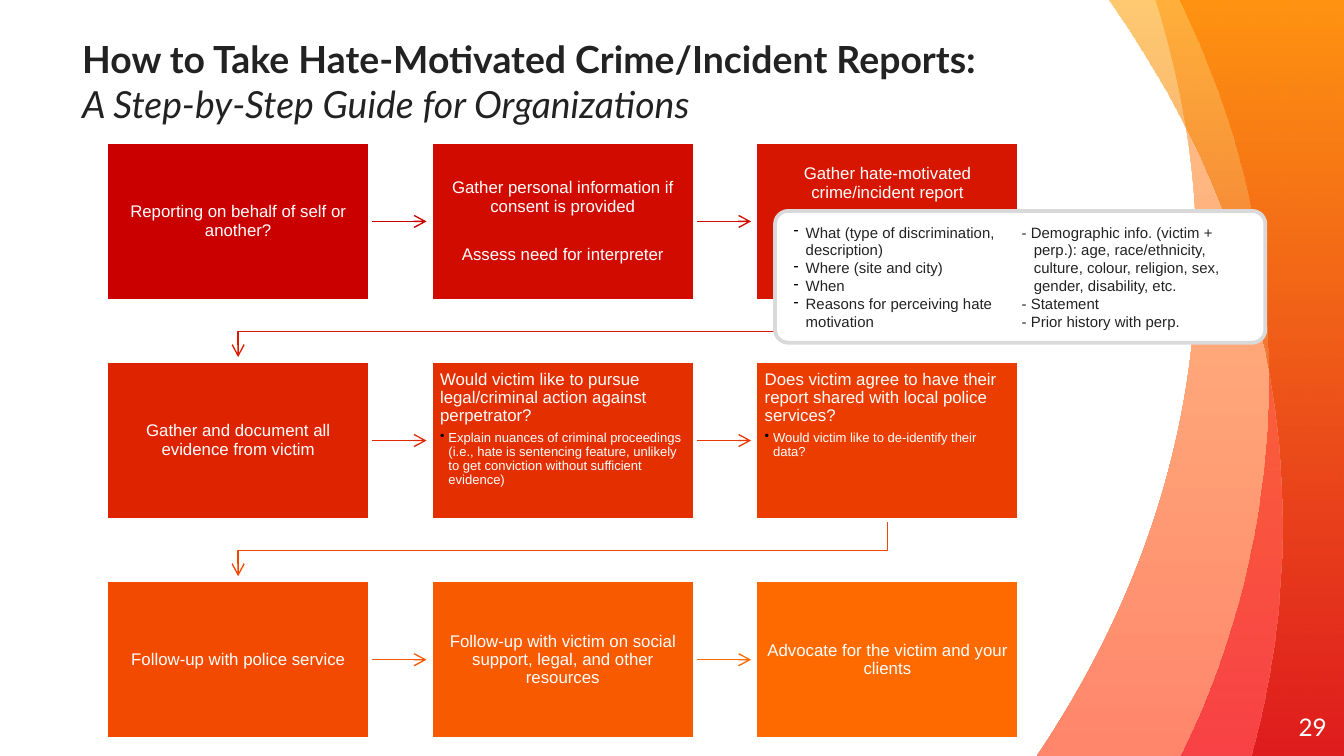
from lxml import etree
from pptx import Presentation, util as u
from pptx.dml.color import RGBColor
from pptx.enum import shapes, text
from pptx.oxml import ns

Pt = u.Pt
WHITE = RGBColor.from_string("FFFFFF")
INK = RGBColor.from_string("222222")
BLACK = RGBColor.from_string("000000")
BORDER = RGBColor.from_string("D9D9D9")
PEACH, CORAL = RGBColor.from_string("FFC486"), RGBColor.from_string("FF866B")
ORANGE, CRIMSON = RGBColor.from_string("FF6A00"), RGBColor.from_string("F20122")
AMBER, RED = RGBColor.from_string("FF9F00"), RGBColor.from_string("CC0000")
STEP_COLORS = [RGBColor.from_string(code) for code in (
    "CA0000", "D10B00", "D71600", "DE2300", "E42F00", "EB3D00", "F24B00", "F85A00", "FF6A00")]
ARROW_COLORS = [RGBColor.from_string(code) for code in (
    "CA0000", "D20C00", "D91A00", "E12800", "E83700", "F04700", "F75800", "FF6A00")]

WIDTH, HEIGHT = 720, 405
GRID_LEFT, GRID_TOP = 56.9, 76.2
STEP_WIDTH, STEP_HEIGHT = 141.4, 84.9
PITCH_X, PITCH_Y = 173.9, 117.4
ARROW_LENGTH, ARROW_HEIGHT, BEND = 30.2, 7.2, 16.5

STEPS = [
    ["Reporting on behalf of self or another?"],
    ["Gather personal information if consent is provided", "Assess need for interpreter"],
    ["Gather hate-motivated crime/incident report"],
    ["Gather and document all evidence from victim"],
    ["Would victim like to pursue legal/criminal action against perpetrator?",
     "Explain nuances of criminal proceedings (i.e., hate is sentencing feature, "
     "unlikely to get conviction without sufficient evidence)"],
    ["Does victim agree to have their report shared with local police services?",
     "Would victim like to de-identify their data?"],
    ["Follow-up with police service"],
    ["Follow-up with victim on social support, legal, and other resources"],
    ["Advocate for the victim and your clients"],
]
BULLETED_STEPS = (4, 5)
REPORT_STEP = 2
DETAILS = ["What (type of discrimination, description)", "Where (site and city)", "When",
           "Reasons for perceiving hate motivation"]
MORE_DETAILS = ["- Demographic info. (victim + perp.): age, race/ethnicity, culture, colour, "
                "religion, sex, gender, disability, etc.",
                "- Statement", "- Prior history with perp."]


def add_child(parent, tag, **attributes):
    return etree.SubElement(parent, ns.qn(tag), {key: str(value) for key, value in attributes.items()})


def setup_frame(shape, anchor, margin):
    frame = shape.text_frame
    frame.word_wrap = True
    frame.vertical_anchor = anchor
    frame.margin_left = frame.margin_right = frame.margin_top = frame.margin_bottom = Pt(margin)
    return frame


def add_paragraph(frame, content, size, color, font="Arial", align=text.PP_ALIGN.LEFT,
                  left=0, hanging=0, bullet=None):
    paragraph = frame.paragraphs[0] if not frame.text else frame.add_paragraph()
    paragraph.text = content
    properties = paragraph._p.get_or_add_pPr()
    properties.set("marL", str(Pt(left)))
    properties.set("indent", str(-Pt(hanging)))
    if bullet:
        add_child(add_child(properties, "a:buClr"), "a:srgbClr", val=BLACK)
        add_child(properties, "a:buChar", char=bullet)
        paragraph.runs[0].font.size = Pt(size)
    paragraph.alignment = align
    paragraph.font.size = Pt(size)
    paragraph.font.name = font
    paragraph.font.color.rgb = color
    return paragraph


def add_box(slide, kind, left, top, width, height, fill, line):
    shape = slide.shapes.add_shape(kind, Pt(left), Pt(top), Pt(width), Pt(height))
    shape.shadow.inherit = False
    shape.fill.solid()
    shape.fill.fore_color.rgb = fill
    shape.line.color.rgb = line
    shape.line.width = Pt(2)
    return shape


def add_outline(slide, points, close):
    corners = [(Pt(x), Pt(y)) for x, y in points]
    builder = slide.shapes.build_freeform(*corners[0], scale=1.0)
    builder.add_line_segments(corners[1:], close=close)
    shape = builder.convert_to_shape()
    shape.shadow.inherit = False
    return shape


def bend_segment(shape, segment, controls):
    segment.tag = ns.qn("a:cubicBezTo")
    for index, (x, y) in enumerate(controls):
        segment.insert(index, etree.Element(
            ns.qn("a:pt"), x=str(Pt(x) - shape.left), y=str(Pt(y) - shape.top)))


def add_wave(slide, start, curves, top_color, bottom_color, opacities=(100, 100)):
    ends = [curve[2] for curve in curves]
    shape = add_outline(slide, [start] + ends + [(WIDTH, HEIGHT), (WIDTH, 0)], True)
    segments = list(shape._element.spPr.iter(ns.qn("a:lnTo")))
    for segment, curve in zip(segments, curves):
        bend_segment(shape, segment, curve[:2])
    shape.line.fill.background()
    shape.fill.gradient()
    shape.fill.gradient_angle = 270
    for stop, color in zip(shape.fill.gradient_stops, (top_color, bottom_color)):
        stop.color.rgb = color
    for color, opacity in zip(shape._element.spPr.iter(ns.qn("a:srgbClr")), opacities):
        if opacity < 100:
            add_child(color, "a:alpha", val=opacity * 1000)


def add_waves(slide):
    add_wave(slide, (619, 0), [((633, 44), (641, 90), (641, 137.5)),
                               ((641, 233), (610, 324), (555.5, HEIGHT))], PEACH, CORAL)
    add_wave(slide, (632, 0), [((663, 64), (679.5, 132), (679.5, 203)),
                               ((679.5, 274), (663, 343), (632.5, HEIGHT))],
             ORANGE, CRIMSON, (71, 51))
    add_wave(slide, (594, 0), [((654, 86), (687, 181), (687, 281.5)),
                               ((687, 324), (681, 366), (670, HEIGHT))], AMBER, RED, (56, 57))


def add_arrow_line(slide, points, color):
    shape = add_outline(slide, points, False)
    shape.fill.background()
    shape.line.color.rgb = color
    shape.line.width = Pt(0.75)
    add_child(shape.line._get_or_add_ln(), "a:tailEnd", type="arrow")
    return shape


def add_arrow(slide, left, top, color):
    right, middle = left + STEP_WIDTH, top + STEP_HEIGHT / 2
    shape = add_arrow_line(slide, [(right, middle), (right + ARROW_LENGTH, middle)], color)
    shape.top, shape.height = Pt(middle - ARROW_HEIGHT / 2), Pt(ARROW_HEIGHT)
    for outline in shape._element.spPr.iter(ns.qn("a:path")):
        outline.set("h", str(Pt(ARROW_HEIGHT)))
        for point in outline.iter(ns.qn("a:pt")):
            point.set("y", str(Pt(ARROW_HEIGHT / 2)))


def add_return_arrow(slide, left, top, color):
    start, end = left + STEP_WIDTH / 2, GRID_LEFT + STEP_WIDTH / 2
    bottom = top + STEP_HEIGHT
    add_arrow_line(slide, [(start, bottom), (start, bottom + BEND), (end, bottom + BEND),
                           (end, bottom + ARROW_LENGTH)], color)


def add_step(slide, index, left, top):
    shape = add_box(slide, shapes.MSO_SHAPE.RECTANGLE, left, top, STEP_WIDTH, STEP_HEIGHT,
                    STEP_COLORS[index], WHITE)
    bulleted = index in BULLETED_STEPS
    at_top = bulleted or index == REPORT_STEP
    frame = setup_frame(shape, text.MSO_ANCHOR.TOP if at_top else text.MSO_ANCHOR.MIDDLE, 5)
    if index == REPORT_STEP:
        frame.margin_top = Pt(12.4)
    for number, content in enumerate(STEPS[index]):
        if bulleted and number:
            paragraph = add_paragraph(frame, content, 7, WHITE, left=4.5, hanging=4.5, bullet="•")
        else:
            align = text.PP_ALIGN.LEFT if bulleted else text.PP_ALIGN.CENTER
            paragraph = add_paragraph(frame, content, 9, WHITE, align=align)
        paragraph.line_spacing = 0.9
        if number < len(STEPS[index]) - 1:
            paragraph.space_after = Pt(3 if bulleted else 16)


def add_flow(slide):
    for index in range(len(STEPS)):
        row, column = divmod(index, 3)
        left, top = GRID_LEFT + column * PITCH_X, GRID_TOP + row * PITCH_Y
        if index < len(ARROW_COLORS):
            draw = add_return_arrow if column == 2 else add_arrow
            draw(slide, left, top, ARROW_COLORS[index])
        add_step(slide, index, left, top)


def add_details(slide):
    shape = add_box(slide, shapes.MSO_SHAPE.ROUNDED_RECTANGLE, 415.2, 113, 262.7, 70.6, WHITE, BORDER)
    shape.adjustments[0] = 0.1
    frame = setup_frame(shape, text.MSO_ANCHOR.MIDDLE, 3.6)
    frame.margin_left = frame.margin_right = Pt(7.2)
    frame._txBody.bodyPr.set("numCol", "2")
    for content in DETAILS + MORE_DETAILS:
        bullet = "-" if content in DETAILS else None
        add_paragraph(frame, content, 8, INK, left=7.3, hanging=6.5, bullet=bullet)


def add_label(slide, left, top, width, height):
    shape = slide.shapes.add_textbox(Pt(left), Pt(top), Pt(width), Pt(height))
    return setup_frame(shape, text.MSO_ANCHOR.MIDDLE, 0)


def main():
    presentation = Presentation()
    presentation.slide_width, presentation.slide_height = Pt(WIDTH), Pt(HEIGHT)
    slide = presentation.slides.add_slide(presentation.slide_layouts[6])
    add_waves(slide)
    add_paragraph(add_label(slide, 667.5, 373.7, 43.2, 31), "29", 13, WHITE, "Lato",
                  text.PP_ALIGN.RIGHT)
    title = add_label(slide, 36, 25.3, 578, 36)
    add_paragraph(title, "How to Take Hate-Motivated Crime/Incident Reports:", 20, INK, "Lato",
                  left=8).font.bold = True
    add_paragraph(title, "A Step-by-Step Guide for Organizations", 20, INK, "Lato",
                  left=8).font.italic = True
    add_flow(slide)
    add_details(slide)
    presentation.save("out.pptx")


if __name__ == "__main__":
    main()
